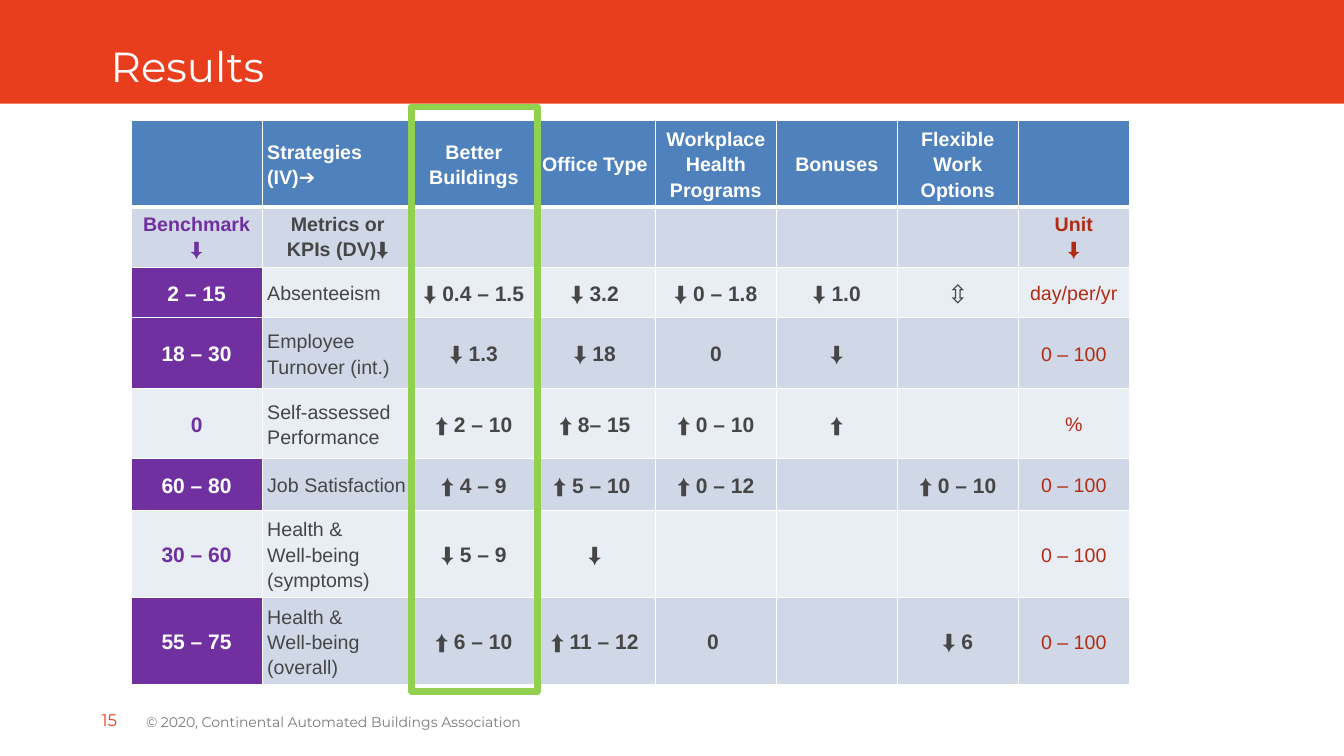
import itertools
from dataclasses import dataclass

import lxml.etree
import pptx
import pptx.dml.color
import pptx.enum.shapes
import pptx.enum.text
import pptx.oxml.ns
import pptx.util

Inches = pptx.util.Inches
Pt = pptx.util.Pt
ALIGN = pptx.enum.text.PP_ALIGN
ANCHOR = pptx.enum.text.MSO_ANCHOR
RECTANGLE = pptx.enum.shapes.MSO_SHAPE.RECTANGLE


@dataclass(frozen=True)
class Theme:
    """Colours, fonts and type sizes of the slide."""
    white: str = "FFFFFF"
    banner: str = "E83E1D"
    header: str = "4F81BD"
    band_dark: str = "D0D8E8"
    band_light: str = "E9EDF4"
    purple: str = "7030A0"
    body: str = "464646"
    unit: str = "B22C12"
    highlight: str = "92D050"
    muted: str = "7A7A7A"
    heading_font: str = "Montserrat"
    table_font: str = "Arial"
    title_size: int = 30
    symbol_size: int = 18
    value_size: int = 15
    label_size: int = 14
    number_size: int = 12
    footer_size: int = 10


THEME = Theme()
ARROWS = "⬇⬆⇳"
COLUMN_WIDTHS = [1.3, 1.5] + [1.2] * 5 + [1.1]
ROW_HEIGHTS = [0.85, 0.58, 0.5, 0.7, 0.7, 0.51, 0.85, 0.85]
PLAIN_BENCHMARKS = ("0", "30 – 60")
RESULTS = [
    ["", "Strategies (IV)➔", "Better Buildings", "Office Type",
     "Workplace Health Programs", "Bonuses", "Flexible Work Options", ""],
    ["Benchmark\n⬇", "Metrics or KPIs (DV)⬇", "", "", "", "", "", "Unit\n⬇"],
    ["2 – 15", "Absenteeism", "⬇ 0.4 – 1.5", "⬇ 3.2", "⬇ 0 – 1.8", "⬇ 1.0", "⇳", "day/per/yr"],
    ["18 – 30", "Employee Turnover (int.)", "⬇ 1.3", "⬇ 18", "0", "⬇", "", "0 – 100"],
    ["0", "Self-assessed Performance", "⬆ 2 – 10", "⬆ 8– 15", "⬆ 0 – 10", "⬆", "", "%"],
    ["60 – 80", "Job Satisfaction", "⬆ 4 – 9", "⬆ 5 – 10 ", "⬆ 0 – 12", "", "⬆ 0 – 10", "0 – 100"],
    ["30 – 60", "Health &\nWell-being (symptoms)", "⬇ 5 – 9", "⬇", "", "", "", "0 – 100"],
    ["55 – 75", "Health &\nWell-being (overall)", "⬆ 6 – 10", "⬆ 11 – 12", "0 ", "", "⬇ 6", "0 – 100"],
]


def rgb(colour):
    """Turn a hex string into a colour."""
    return pptx.dml.color.RGBColor.from_string(colour)


def style_font(font, name, size, colour):
    """Set the face, size and colour of a font."""
    font.name, font.size = name, Pt(size)
    font.color.rgb = rgb(colour)


def add_label(slide, box, text, size, colour, anchor=ANCHOR.TOP, line_spacing=1.0):
    """Place one line of heading-font text in a box."""
    frame = slide.shapes.add_textbox(*map(Inches, box)).text_frame
    frame.word_wrap = True
    frame.vertical_anchor = anchor
    paragraph = frame.paragraphs[0]
    paragraph.text = text
    paragraph.line_spacing = line_spacing
    style_font(paragraph.font, THEME.heading_font, size, colour)


def add_banner(slide, box):
    """Draw the coloured banner with the slide title."""
    left, top, width, height = box
    banner = slide.shapes.add_shape(RECTANGLE, *map(Inches, box))
    banner.shadow.inherit = False
    banner.fill.solid()
    banner.fill.fore_color.rgb = rgb(THEME.banner)
    banner.line.fill.background()
    add_label(slide, (left + 1, top + 0.4, 9.06, 0.57), "Results", THEME.title_size,
              THEME.white, ANCHOR.MIDDLE, 0.9)


def cell_look(row, column, text):
    """Return fill, text colour, size and boldness for a table cell."""
    band = THEME.band_dark if row % 2 else THEME.band_light
    if row == 0:
        return THEME.header, THEME.white, THEME.label_size, True
    if row == 1:
        colour = {0: THEME.purple, 7: THEME.unit}.get(column, THEME.body)
        return band, colour, THEME.label_size, True
    if column == 0:
        plain = text in PLAIN_BENCHMARKS
        return (band if plain else THEME.purple, THEME.purple if plain else THEME.white,
                THEME.value_size, True)
    if column == 1:
        return band, THEME.body, THEME.label_size, False
    if column == 7:
        return band, THEME.unit, THEME.label_size, False
    return band, THEME.body, THEME.symbol_size if text == "⇳" else THEME.value_size, True


def add_borders(cell, row):
    """Give a cell white borders, thicker below the header row."""
    properties = cell._tc.get_or_add_tcPr()
    widths = {"L": 1, "R": 1, "T": 3 if row == 1 else 1, "B": 3 if row == 0 else 1}
    for position, (side, width) in enumerate(widths.items()):
        border = lxml.etree.Element(pptx.oxml.ns.qn(f"a:ln{side}"), w=str(Pt(width)))
        fill = lxml.etree.SubElement(border, pptx.oxml.ns.qn("a:solidFill"))
        lxml.etree.SubElement(fill, pptx.oxml.ns.qn("a:srgbClr"), val=THEME.white)
        properties.insert(position, border)


def fill_cell(cell, row, column, text):
    """Write and format one table cell."""
    fill, colour, size, bold = cell_look(row, column, text)
    cell.fill.solid()
    cell.fill.fore_color.rgb = rgb(fill)
    add_borders(cell, row)
    cell.margin_left = cell.margin_right = Inches(0.05)
    cell.margin_top = cell.margin_bottom = Inches(0.03)
    cell.vertical_anchor = ANCHOR.TOP if row == 1 else ANCHOR.MIDDLE
    paragraph = cell.text_frame.paragraphs[0]
    paragraph.line_spacing = 1.15
    paragraph.alignment = ALIGN.LEFT if column == 1 and row != 1 else ALIGN.CENTER
    style_font(paragraph.font, THEME.table_font, size, colour)
    for line_number, line in enumerate(text.split("\n")):
        if line_number:
            paragraph.add_line_break()
        for is_arrow, letters in itertools.groupby(line, lambda letter: letter in ARROWS):
            run = paragraph.add_run()
            run.text = "".join(letters)
            style_font(run.font, THEME.table_font, size, colour)
            run.font.bold = bold and not is_arrow


def add_results(slide, box):
    """Build the results table and frame its Better Buildings column."""
    left, top, width, height = box
    table = slide.shapes.add_table(len(RESULTS), len(COLUMN_WIDTHS), *map(Inches, box)).table
    for column, column_width in zip(table.columns, COLUMN_WIDTHS):
        column.width = Inches(column_width)
    for row, row_height in zip(table.rows, ROW_HEIGHTS):
        row.height = Inches(row_height)
    for row, texts in enumerate(RESULTS):
        for column, text in enumerate(texts):
            fill_cell(table.cell(row, column), row, column, text)
    frame_box = (left + sum(COLUMN_WIDTHS[:2]) - 0.02, top - 0.13, 1.25, height + 0.26)
    highlight = slide.shapes.add_shape(RECTANGLE, *map(Inches, frame_box))
    highlight.shadow.inherit = False
    highlight.fill.background()
    highlight.line.color.rgb = rgb(THEME.highlight)
    highlight.line.width = Pt(4.5)


def add_footer(slide, box):
    """Place the slide number and the copyright line."""
    left, top, width, height = box
    add_label(slide, (left, top, 0.68, 0.39), "15", THEME.number_size, THEME.banner,
              ANCHOR.MIDDLE)
    add_label(slide, (left + 0.44, top + 0.08, width - 0.44, height - 0.08),
              "© 2020, Continental Automated Buildings Association",
              THEME.footer_size, THEME.muted)


def main():
    """Build and save the results slide."""
    presentation = pptx.Presentation()
    presentation.slide_width, presentation.slide_height = Inches(13.33), Inches(7.5)
    slide = presentation.slides.add_slide(presentation.slide_layouts[6])
    add_banner(slide, (0, 0, 13.33, 1.03))
    add_results(slide, (1.3, 1.19, sum(COLUMN_WIDTHS), sum(ROW_HEIGHTS)))
    add_footer(slide, (0.91, 6.95, 5.29, 0.48))
    presentation.save("out.pptx")


if __name__ == "__main__":
    main()
